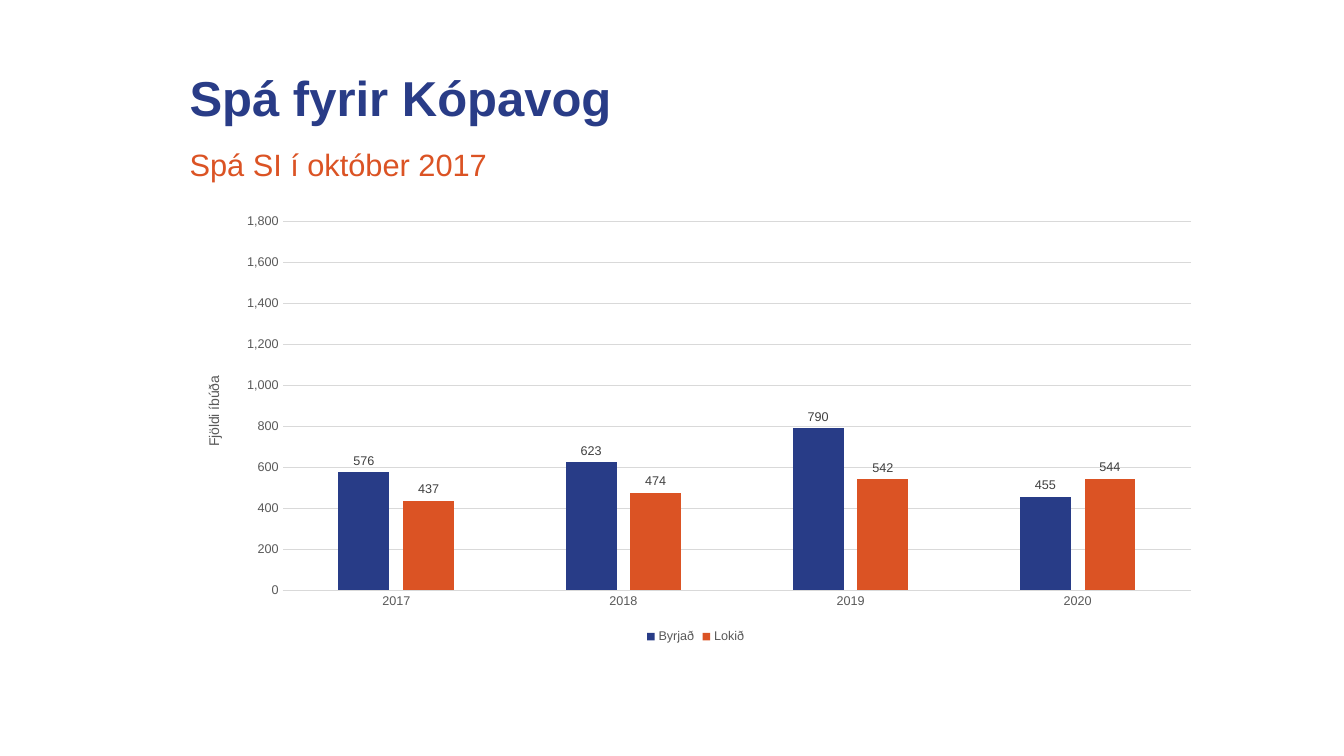
from lxml.etree import SubElement
from pptx import Presentation
from pptx.chart.data import CategoryChartData
from pptx.dml.color import RGBColor
from pptx.enum.chart import XL_CHART_TYPE as ChartType
from pptx.enum.chart import XL_LABEL_POSITION as LabelPosition
from pptx.enum.chart import XL_LEGEND_POSITION as LegendPosition
from pptx.enum.chart import XL_TICK_MARK as TickMark
from pptx.enum.text import MSO_ANCHOR as Anchor
from pptx.enum.text import MSO_AUTO_SIZE as AutoSize
from pptx.enum.text import PP_ALIGN as Align
from pptx.oxml.ns import qn
from pptx.util import Pt

PX = 9144
NAVY, ORANGE = "293C87", "DB5324"
GREY, DARK, RULE = "595959", "404040", "D9D9D9"
YEARS = ["2017", "2018", "2019", "2020"]
FORECAST = [
    ("Byrjað", [576, 623, 790, 455], "283C87"),
    ("Lokið", [437, 474, 542, 544], ORANGE),
]
PLOT_AREA = {"x": 0.1, "y": 0.04, "w": 0.88, "h": 0.83}


def color(hex_string):
    """Turn a hex string into a colour."""
    return RGBColor.from_string(hex_string)


def emu(box):
    """Scale a box of px to EMU."""
    return [length * PX for length in box]


def style_font(font, size, hex_string, bold=False):
    """Set the face, size, colour and weight of a font."""
    font.name, font.size, font.bold = "Arial", Pt(size), bold
    font.color.rgb = color(hex_string)


def style_rule(line):
    """Make a line a thin light grey rule."""
    line.color.rgb = color(RULE)
    line.width = Pt(0.75)


def fill_heading(holder, box, text, size, hex_string, anchor, bold=False):
    """Place a placeholder in the box as one line of heading text."""
    holder.left, holder.top, holder.width, holder.height = emu(box)
    frame = holder.text_frame
    frame.text = text
    frame.auto_size = AutoSize.NONE
    frame.vertical_anchor = anchor
    line = frame.paragraphs[0]
    properties = line._p.get_or_add_pPr()
    properties.set("marL", "0")
    properties.set("indent", "0")
    SubElement(properties, qn("a:buNone"))
    line.alignment = Align.LEFT
    line.line_spacing = 0.9
    line.space_before = Pt(0)
    style_font(line.font, size, hex_string, bold)


def fix_plot_area(chart):
    """Pin the inner plot area to its share of the chart."""
    plot_area = chart._chartSpace.chart.plotArea
    for old in plot_area.findall(qn("c:layout")):
        plot_area.remove(old)
    layout = SubElement(plot_area, qn("c:layout"))
    plot_area.insert(0, layout)
    manual = SubElement(layout, qn("c:manualLayout"))
    settings = {"layoutTarget": "inner", "xMode": "edge", "yMode": "edge", **PLOT_AREA}
    for tag, value in settings.items():
        SubElement(manual, qn(f"c:{tag}")).set("val", str(value))


def style_axes(chart):
    """Format the year axis and the axis of dwelling counts."""
    years, dwellings = chart.category_axis, chart.value_axis
    for axis in (years, dwellings):
        axis.major_tick_mark = axis.minor_tick_mark = TickMark.NONE
        style_font(axis.tick_labels.font, 9, GREY)
    style_rule(years.format.line)
    dwellings.format.line.fill.background()
    dwellings.minimum_scale, dwellings.maximum_scale = 0, 1800
    dwellings.major_unit = 200
    dwellings.tick_labels.number_format = "#,##0"
    dwellings.tick_labels.number_format_is_linked = False
    style_rule(dwellings.major_gridlines.format.line)
    caption = dwellings.axis_title.text_frame
    caption.text = "Fjöldi íbúða"
    style_font(caption.paragraphs[0].font, 10, GREY)


def add_forecast(slide, box):
    """Draw the clustered columns of the forecast in the box."""
    data = CategoryChartData()
    data.categories = YEARS
    for name, counts, _ in FORECAST:
        data.add_series(name, counts)
    chart = slide.shapes.add_chart(ChartType.COLUMN_CLUSTERED, *emu(box), data).chart
    style_font(chart.font, 10, "000000")
    chart.has_title = False
    chart.has_legend = True
    chart.legend.position = LegendPosition.BOTTOM
    chart.legend.include_in_layout = False
    style_font(chart.legend.font, 9, GREY)
    style_axes(chart)
    fix_plot_area(chart)
    plot = chart.plots[0]
    plot.gap_width, plot.overlap, plot.vary_by_categories = 219, -27, False
    for series, (_, _, hex_string) in zip(plot.series, FORECAST):
        series.format.fill.solid()
        series.format.fill.fore_color.rgb = color(hex_string)
        labels = series.data_labels
        labels.show_value = True
        labels.position = LabelPosition.OUTSIDE_END
        style_font(labels.font, 9, DARK)


def main():
    """Build the forecast slide and save it."""
    deck = Presentation()
    deck.slide_width, deck.slide_height = emu((1333, 750))
    slide = deck.slides.add_slide(deck.slide_layouts[1])
    title, subtitle = slide.placeholders
    left, width = 178, 1024
    fill_heading(title, (left, 60, width, 71), "Spá fyrir Kópavog",
                 35, NAVY, Anchor.BOTTOM, bold=True)
    fill_heading(subtitle, (left, 144, width, 39), "Spá SI í október 2017",
                 22, ORANGE, Anchor.TOP)
    add_forecast(slide, (left, 202, width, 441))
    deck.save("out.pptx")


if __name__ == "__main__":
    main()
